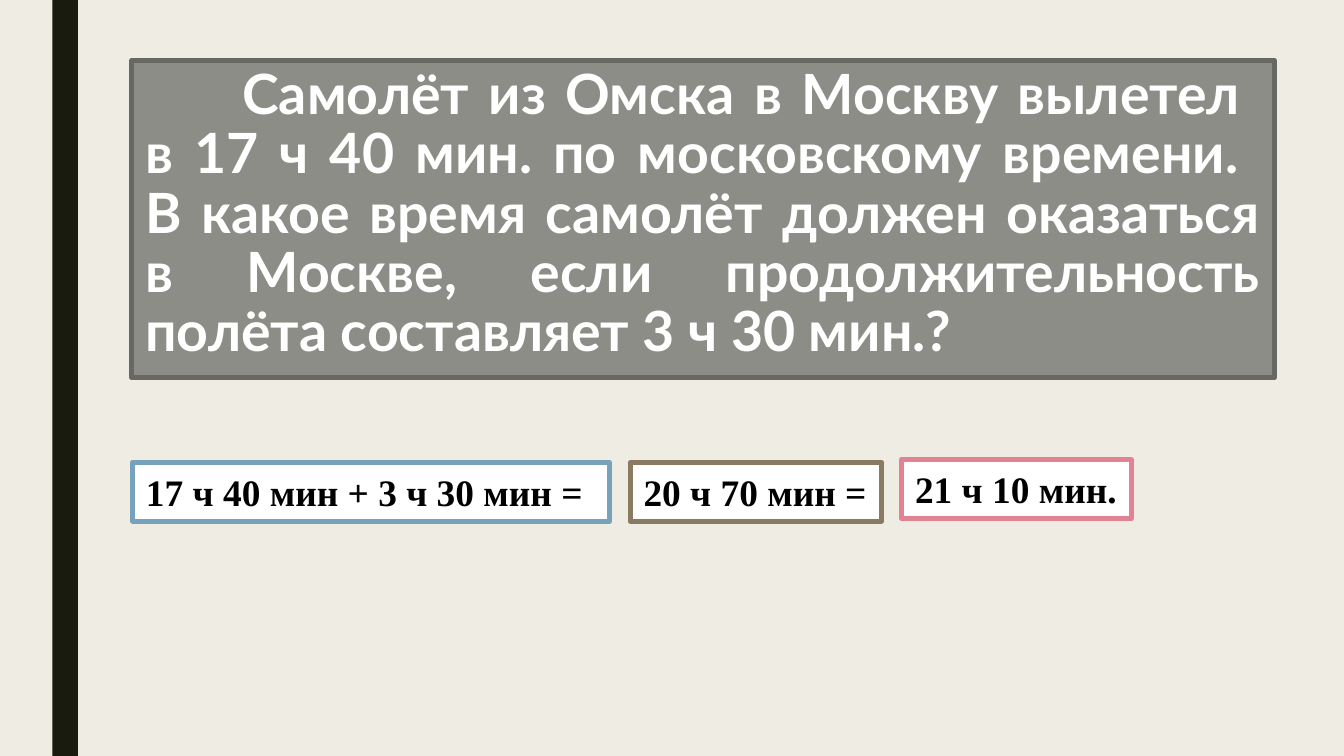
import pptx
import pptx.dml.color
import pptx.enum.shapes
import pptx.enum.text
import pptx.util

Pt = pptx.util.Pt
ALIGN = pptx.enum.text.PP_ALIGN
ANCHOR = pptx.enum.text.MSO_ANCHOR
AUTO_SIZE = pptx.enum.text.MSO_AUTO_SIZE

COLORS = {
    "background": "EFEDE3",
    "band": "191B0E",
    "problem": "8C8D86",
    "problem_border": "686863",
    "white": "FFFFFF",
    "black": "000000",
    "blue": "77A2BB",
    "brown": "897B61",
    "pink": "E28394",
}

PROBLEM = (
    "Самолёт из Омска в Москву вылетел \n"
    "в 17 ч 40 мин. по московскому времени. \n"
    "В какое время самолёт должен оказаться\n"
    "в Москве, если продолжительность полёта составляет 3 ч 30 мин.?"
)

# text, left, top, width, border colour
STEPS = [
    ("17 ч 40 мин + 3 ч 30 мин = ", 71.1, 247.7, 255.6, "blue"),
    ("20 ч 70 мин =", 337.7, 247.7, 134.6, "brown"),
    ("21 ч 10 мин.", 483.1, 246.2, 123.1, "pink"),
]
STEP_HEIGHT = 31.5


def rgb(name):
    return pptx.dml.color.RGBColor.from_string(COLORS[name])


def place(shape, left, top, width, height):
    shape.left, shape.top = Pt(left), Pt(top)
    shape.width, shape.height = Pt(width), Pt(height)


def paint(shape, fill, border=None):
    shape.fill.solid()
    shape.fill.fore_color.rgb = rgb(fill)
    if border:
        shape.line.color.rgb = rgb(border)
        shape.line.width = Pt(2.75)
    else:
        shape.line.fill.background()


def write(shape, text, *, font, size, color, align=ALIGN.LEFT, spacing=1.0,
          indent=0, wrap=True, fit=AUTO_SIZE.NONE):
    """Fill a shape with one bold paragraph; a newline is a line break."""
    frame = shape.text_frame
    frame.word_wrap = wrap
    frame.auto_size = fit
    frame.vertical_anchor = ANCHOR.TOP
    paragraph = frame.paragraphs[0]
    paragraph.alignment = align
    paragraph.line_spacing = spacing
    if indent:
        paragraph._p.get_or_add_pPr().set("indent", str(Pt(indent)))
    for number, line in enumerate(text.split("\n")):
        if number:
            paragraph.add_line_break()
        run = paragraph.add_run()
        run.text = line
        run.font.name = font
        run.font.size = Pt(size)
        run.font.bold = True
        run.font.color.rgb = rgb(color)


def add_band(slide, height):
    band = slide.shapes.add_shape(
        pptx.enum.shapes.MSO_SHAPE.RECTANGLE, Pt(28.1), 0, Pt(13.7), height)
    band.shadow.inherit = False
    paint(band, "band")


def add_problem(slide):
    problem = slide.shapes.title
    place(problem, 70.6, 32.4, 612, 170)
    paint(problem, "problem", "problem_border")
    write(problem, PROBLEM, font="Lato", size=29.7, color="white",
          align=ALIGN.JUSTIFY, spacing=0.89, indent=52)


def add_step(slide, text, left, top, width, border):
    step = slide.shapes.add_textbox(
        Pt(left), Pt(top), Pt(width), Pt(STEP_HEIGHT))
    paint(step, "white", border)
    write(step, text, font="Times New Roman", size=20, color="black",
          wrap=False, fit=AUTO_SIZE.SHAPE_TO_FIT_TEXT)


def main():
    deck = pptx.Presentation()
    deck.slide_width, deck.slide_height = Pt(720), Pt(405)
    slide = deck.slides.add_slide(deck.slide_layouts.get_by_name("Title Only"))
    slide.background.fill.solid()
    slide.background.fill.fore_color.rgb = rgb("background")
    add_band(slide, deck.slide_height)
    add_problem(slide)
    for step in STEPS:
        add_step(slide, *step)
    deck.save("out.pptx")


if __name__ == "__main__":
    main()
